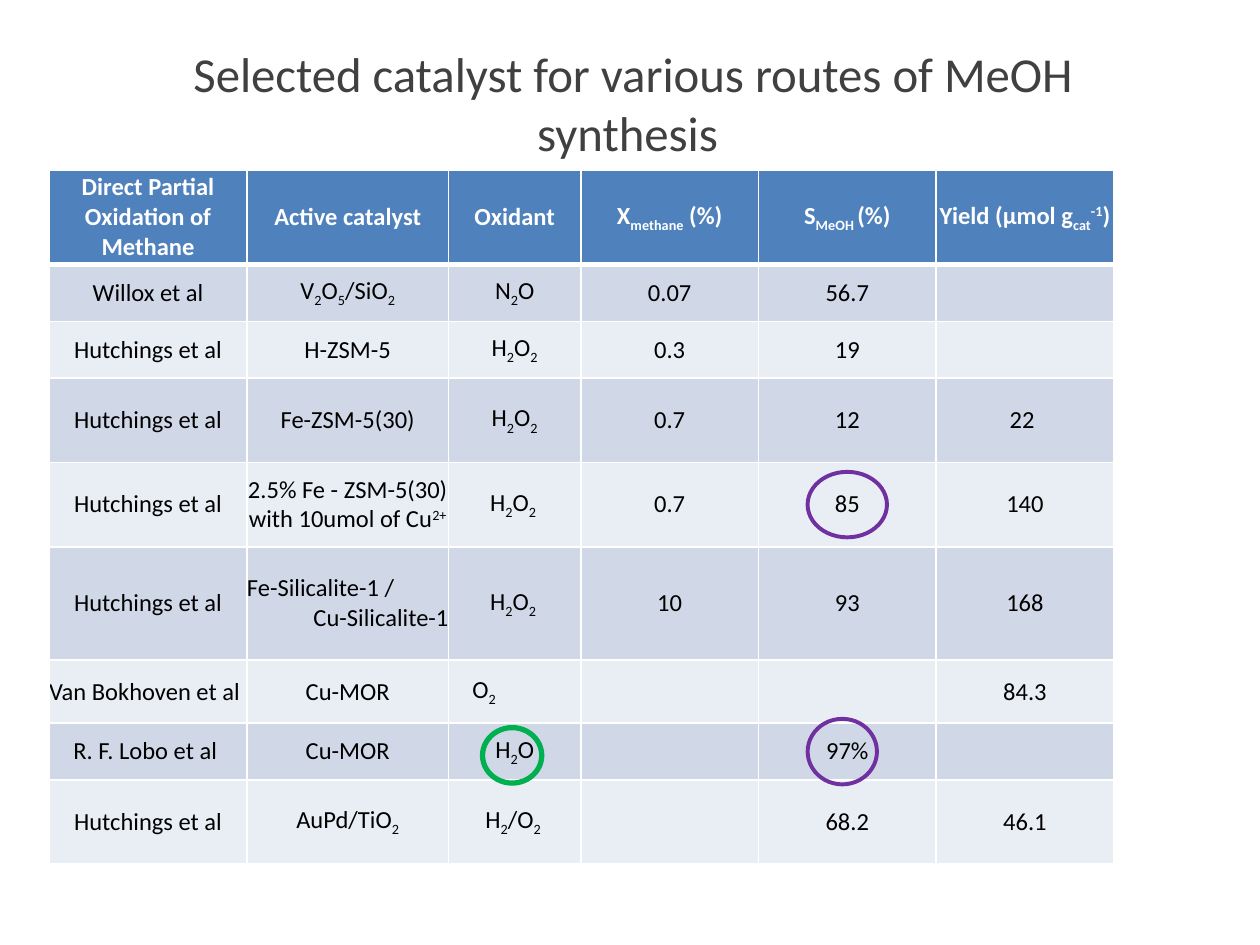
"""Builds a slide comparing catalysts for methanol synthesis."""
from lxml import etree
from pptx import Presentation
from pptx.dml.color import RGBColor
from pptx.enum.shapes import MSO_SHAPE
from pptx.enum.text import MSO_ANCHOR, PP_ALIGN
from pptx.oxml.ns import qn
from pptx.util import Inches, Pt

CENTER, LEFT, RIGHT = PP_ALIGN.CENTER, PP_ALIGN.LEFT, PP_ALIGN.RIGHT
MIDDLE = MSO_ANCHOR.MIDDLE
OVAL = MSO_SHAPE.OVAL
WHITE = RGBColor(0xFF, 0xFF, 0xFF)
BLACK = RGBColor(0, 0, 0)
GREY = RGBColor(0x40, 0x40, 0x40)
HEADER_BLUE = RGBColor(0x4F, 0x81, 0xBD)
BANDS = (RGBColor(0xE9, 0xED, 0xF4), RGBColor(0xD0, 0xD8, 0xE8))
PURPLE = RGBColor(0x70, 0x30, 0xA0)
GREEN = RGBColor(0x00, 0xB0, 0x50)

TABLE_LEFT, TABLE_TOP = 0.39, 1.35
COLUMNS = (1.57, 1.6, 1.05, 1.41, 1.41, 1.41)
ROWS = (0.75, 0.45, 0.45, 0.67, 0.67, 0.9, 0.5, 0.45, 0.67)
SUBSCRIPT, SUPERSCRIPT = -25000, 30000

TITLE_FONT = {"name": "Calibri", "size": Pt(27.9)}
HEADER_FONT = {"name": "Calibri", "size": Pt(14), "bold": True}
BODY_FONT = {**HEADER_FONT, "bold": False}
CELL_FORMAT = {"margin_left": 0, "margin_top": 0, "margin_right": 0,
               "margin_bottom": 0, "vertical_anchor": MIDDLE}

RESULTS = (
    ("Direct Partial Oxidation of Methane", "Active catalyst", "Oxidant",
     "X~methane~ (%)", "S~MeOH ~(%)", "Yield (µmol g~cat~^-1^)"),
    ("Willox et al", "V~2~O~5~/SiO~2~", "N~2~O", "0.07", "56.7", ""),
    ("Hutchings et al", "H-ZSM-5", "H~2~O~2~", "0.3", "19", ""),
    ("Hutchings et al", "Fe-ZSM-5(30)", "H~2~O~2~", "0.7", "12", "22\N{NO-BREAK SPACE}"),
    ("Hutchings et al", "2.5% Fe - ZSM-5(30) with 10umol of Cu^2+^",
     "H~2~O~2 ~", "0.7", "85", "140"),
    ("Hutchings et al", "Fe-Silicalite-1 /\nCu-Silicalite-1",
     "H~2~O~2 ~", "10", "93", "168"),
    ("Van Bokhoven et al", "Cu-MOR", "O~2~", "", "", "84.3"),
    ("R. F. Lobo et al ", "Cu-MOR", "H~2~O", "", "97%", ""),
    ("Hutchings et al", "AuPd/TiO~2~", "H~2~/O~2 ~", "", "68.2", "46.1"),
)
ALIGNMENTS = {(5, 1): (LEFT, RIGHT), (6, 0): (LEFT,), (6, 2): (LEFT,)}
OXYGEN_CELL, OXYGEN_INDENT = (6, 2), 0.19


def apply_format(target, values):
    """Set each named attribute of the target."""
    for name, value in values.items():
        setattr(target, name, value)


def add_run(paragraph, text, font, color, baseline=0):
    """Append formatted text, raised or lowered by the baseline."""
    run = paragraph.add_run()
    run.text = text
    apply_format(run.font, font)
    run.font.color.rgb = color
    if baseline:
        run.font._element.set("baseline", str(baseline))


def add_formula(paragraph, formula, font, color):
    """Write a formula with ~subscript~ and ^superscript^ marks."""
    for i, part in enumerate(formula.split("~")):
        for j, piece in enumerate(part.split("^")):
            if piece:
                baseline = SUBSCRIPT if i % 2 else SUPERSCRIPT if j % 2 else 0
                add_run(paragraph, piece, font, color, baseline)


def add_title(slide, text):
    """Add the centred slide title."""
    title = slide.shapes.add_textbox(
        Inches(0.9), Inches(0.31), Inches(8.25), Inches(1.01))
    apply_format(title.text_frame, {"word_wrap": True, "vertical_anchor": MIDDLE})
    heading = title.text_frame.paragraphs[0]
    heading.alignment = CENTER
    add_run(heading, text, TITLE_FONT, GREY)


def add_borders(cell, widths):
    """Draw white lines on the sides of a cell."""
    properties = cell._tc.get_or_add_tcPr()
    for side, width in widths.items():
        line = etree.SubElement(properties, qn(f"a:ln{side}"), w=str(Pt(width)))
        fill = etree.SubElement(line, qn("a:solidFill"))
        etree.SubElement(fill, qn("a:srgbClr"), val=str(WHITE))


def fill_cell(cell, row, column, text):
    """Format one table cell and write its lines."""
    apply_format(cell, CELL_FORMAT)
    if (row, column) == OXYGEN_CELL:
        cell.margin_left = Inches(OXYGEN_INDENT)
    add_borders(cell, {"L": 1, "R": 1, "T": 3 if row == 1 else 1,
                       "B": 3 if row == 0 else 1})
    cell.fill.solid()
    cell.fill.fore_color.rgb = BANDS[row % 2] if row else HEADER_BLUE
    font, color = (BODY_FONT, BLACK) if row else (HEADER_FONT, WHITE)
    lines = text.split("\n")
    alignments = ALIGNMENTS.get((row, column), (CENTER,))
    for i, (line, alignment) in enumerate(zip(lines, alignments)):
        frame = cell.text_frame
        paragraph = frame.add_paragraph() if i else frame.paragraphs[0]
        paragraph.alignment = alignment
        add_formula(paragraph, line, font, color)


def add_results(slide):
    """Add the table of catalyst results."""
    table = slide.shapes.add_table(
        len(ROWS), len(COLUMNS), Inches(TABLE_LEFT), Inches(TABLE_TOP),
        Inches(sum(COLUMNS)), Inches(sum(ROWS))).table
    table.horz_banding = False
    for column, width in zip(table.columns, COLUMNS):
        column.width = Inches(width)
    for row, height in zip(table.rows, ROWS):
        row.height = Inches(height)
    for i, texts in enumerate(RESULTS):
        for j, text in enumerate(texts):
            fill_cell(table.cell(i, j), i, j, text)


def circle_value(slide, row, column, size, color, weight, shift=(0, 0)):
    """Ring the value in a table cell, shifted from the cell's centre."""
    width, height = size
    center_x = TABLE_LEFT + sum(COLUMNS[:column]) + COLUMNS[column] / 2 + shift[0]
    center_y = TABLE_TOP + sum(ROWS[:row]) + ROWS[row] / 2 + shift[1]
    ring = slide.shapes.add_shape(
        OVAL, Inches(center_x - width / 2), Inches(center_y - height / 2),
        Inches(width), Inches(height))
    ring.shadow.inherit = False
    ring.fill.background()
    ring.line.color.rgb = color
    ring.line.width = Pt(weight)


def main():
    """Build and save the slide."""
    deck = Presentation()
    apply_format(deck, {"slide_width": Inches(10), "slide_height": Inches(7.5)})
    slide = deck.slides.add_slide(deck.slide_layouts[6])
    add_title(slide, "Selected catalyst for various routes of MeOH synthesis ")
    add_results(slide)
    circle_value(slide, 4, 4, (0.63, 0.52), PURPLE, 2.25)
    circle_value(slide, 7, 4, (0.55, 0.52), PURPLE, 2.25, (-0.04, 0))
    circle_value(slide, 7, 2, (0.47, 0.44), GREEN, 3, (-0.02, 0.03))
    deck.save("out.pptx")


if __name__ == "__main__":
    main()
